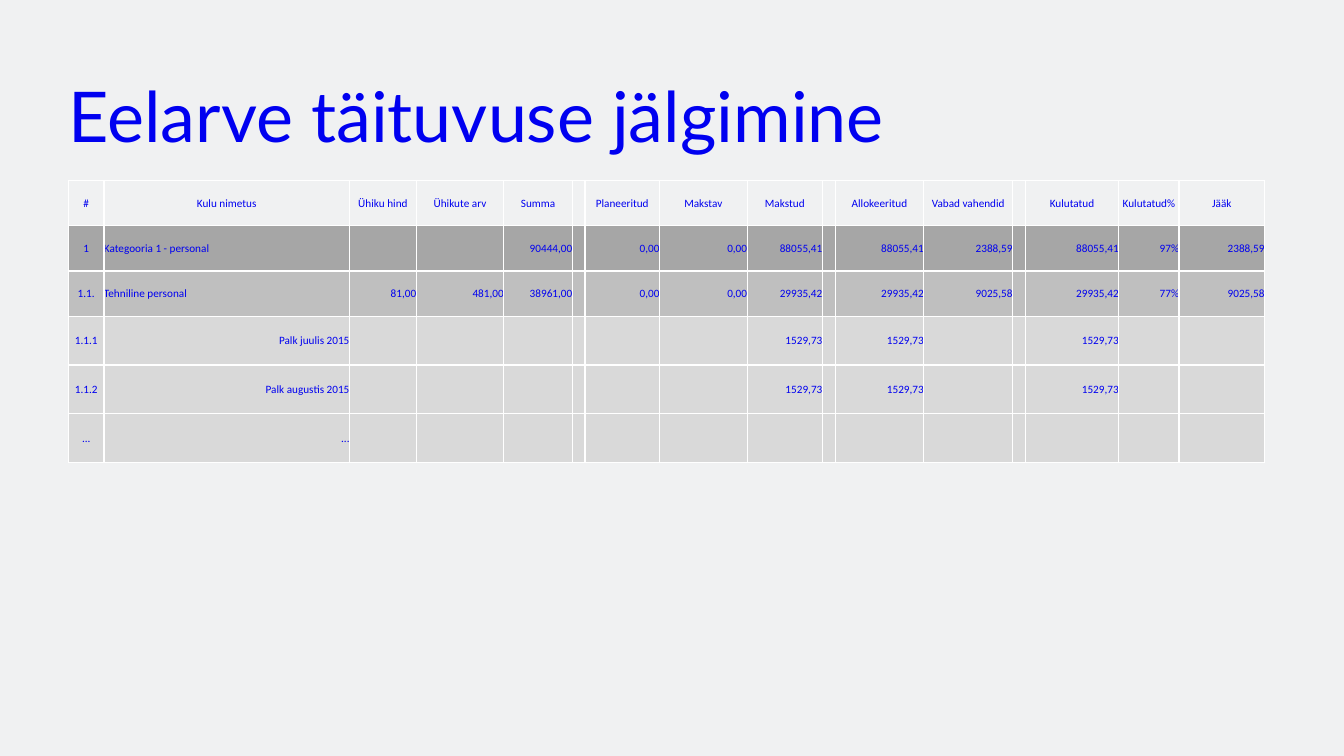
import lxml.etree
import pptx
import pptx.dml.color
import pptx.enum.text
import pptx.oxml.ns
import pptx.util

Cm = pptx.util.Cm
RGBColor = pptx.dml.color.RGBColor
Align = pptx.enum.text.PP_ALIGN
Anchor = pptx.enum.text.MSO_ANCHOR
qn = pptx.oxml.ns.qn

BLUE = RGBColor(0x00, 0x00, 0xF0)
WHITE = RGBColor(0xFF, 0xFF, 0xFF)
PAPER = RGBColor(0xF0, 0xF1, 0xF2)
CATEGORY_GREY = RGBColor(0xA6, 0xA6, 0xA6)
GROUP_GREY = RGBColor(0xBF, 0xBF, 0xBF)
DETAIL_GREY = RGBColor(0xD9, 0xD9, 0xD9)
PLAIN_TABLE_STYLE = "{2D5ABB26-0587-4C30-8999-92F81FD0307C}"

COLUMN_WIDTHS = [0.89, 6.2, 1.68, 2.21, 1.73, 0.32, 1.88, 2.21,
                 1.9, 0.32, 2.24, 2.24, 0.32, 2.36, 1.52, 2.16]
HEADINGS = ["#", "Kulu nimetus", "Ühiku hind", "Ühikute arv", "Summa", "",
            "Planeeritud", "Makstav", "Makstud", "", "Allokeeritud",
            "Vabad vahendid", "", "Kulutatud", "Kulutatud%", "Jääk"]


def payment_row(number, name, paid):
    return [number, name, *[""] * 6, paid, "", paid, "", "", paid, "", ""]


BUDGET_ROWS = [
    (HEADINGS, 1.14, None, Align.CENTER, Align.CENTER),
    (["1", "Kategooria 1 - personal", "", "", "90444,00", "", "0,00", "0,00",
      "88055,41", "", "88055,41", "2388,59", "", "88055,41", "97%", "2388,59"],
     1.14, CATEGORY_GREY, Align.LEFT, Align.RIGHT),
    (["1.1.", "Tehniline personal", "81,00", "481,00", "38961,00", "", "0,00", "0,00",
      "29935,42", "", "29935,42", "9025,58", "", "29935,42", "77%", "9025,58"],
     1.14, GROUP_GREY, Align.LEFT, Align.RIGHT),
    (payment_row("1.1.1", "Palk juulis 2015", "1529,73"),
     1.23, DETAIL_GREY, Align.RIGHT, Align.RIGHT),
    (payment_row("1.1.2", "Palk augustis 2015", "1529,73"),
     1.23, DETAIL_GREY, Align.RIGHT, Align.RIGHT),
    (payment_row("...", "...", ""), 1.23, DETAIL_GREY, Align.RIGHT, Align.RIGHT),
]


def write_text(frame, text, font, size, color=BLUE, align=Align.LEFT):
    para = frame.paragraphs[0]
    para.alignment = align
    para.font.size = pptx.util.Pt(size)
    if text:
        span = para.add_run()
        span.text = text
        span.font.name = font
        span.font.size = pptx.util.Pt(size)
        span.font.color.rgb = color


def add_borders(cell, color, width):
    properties = cell._tc.get_or_add_tcPr()
    for side in ("a:lnL", "a:lnR", "a:lnT", "a:lnB"):
        line = lxml.etree.SubElement(properties, qn(side), w=str(pptx.util.Pt(width)))
        fill = lxml.etree.SubElement(line, qn("a:solidFill"))
        lxml.etree.SubElement(fill, qn("a:srgbClr"), val=str(color))


def format_cell(cell, fill_color):
    cell.margin_left = cell.margin_right = cell.margin_top = cell.margin_bottom = 0
    cell.vertical_anchor = Anchor.MIDDLE
    add_borders(cell, WHITE, 1)
    if fill_color is None:
        cell.fill.background()
    else:
        cell.fill.solid()
        cell.fill.fore_color.rgb = fill_color


def place_title(page, left, top, width, height):
    title = page.shapes.title
    title.left, title.top, title.width, title.height = left, top, width, height
    frame = title.text_frame
    frame.margin_left = frame.margin_right = frame.margin_top = frame.margin_bottom = 0
    frame.vertical_anchor = Anchor.TOP
    frame.word_wrap = True
    frame.auto_size = pptx.enum.text.MSO_AUTO_SIZE.NONE
    write_text(frame, "Eelarve täituvuse jälgimine", font="Lato", size=50)


def place_budget_table(page, left, top, width, height):
    table = page.shapes.add_table(
        len(BUDGET_ROWS), len(COLUMN_WIDTHS), left, top, width, height).table
    table.first_row = table.horz_banding = False
    table._tbl.tblPr.find(qn("a:tableStyleId")).text = PLAIN_TABLE_STYLE
    scale = width / sum(COLUMN_WIDTHS)
    for column, share in zip(table.columns, COLUMN_WIDTHS):
        column.width = round(share * scale)
    for row, (texts, row_height, color, name_align, value_align) in zip(
            table.rows, BUDGET_ROWS):
        row.height = Cm(row_height)
        aligns = [Align.CENTER, name_align] + [value_align] * (len(texts) - 2)
        for cell, text, align in zip(row.cells, texts, aligns):
            format_cell(cell, color)
            write_text(cell.text_frame, text, font="Calibri", size=8, align=align)


def build_budget_page(deck):
    page = deck.slides.add_slide(deck.slide_layouts[5])
    page.background.fill.solid()
    page.background.fill.fore_color.rgb = PAPER
    left, top, width, title_height = Cm(1.73), Cm(1.83), Cm(30.15), Cm(2.72)
    place_title(page, left, top, width, title_height)
    place_budget_table(page, left, top + title_height, width, Cm(7.1))


def main():
    deck = pptx.Presentation()
    deck.slide_width, deck.slide_height = Cm(33.87), Cm(19.05)
    build_budget_page(deck)
    deck.save("out.pptx")


if __name__ == "__main__":
    main()
